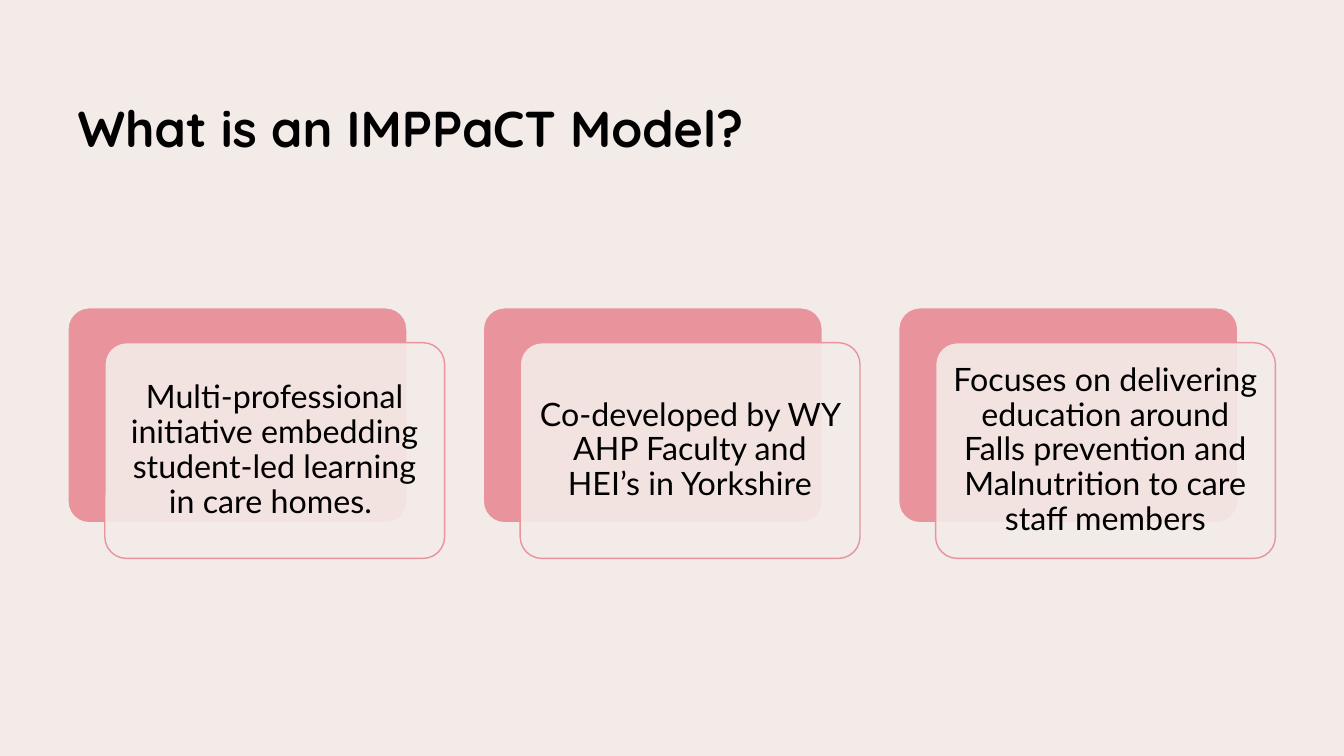
from dataclasses import dataclass

from lxml import etree
from pptx import Presentation
from pptx.dml.color import RGBColor
from pptx.enum.shapes import MSO_SHAPE
from pptx.enum.text import MSO_ANCHOR, MSO_AUTO_SIZE, PP_ALIGN
from pptx.oxml.ns import qn
from pptx.shapes.autoshape import Shape
from pptx.slide import Slide
from pptx.util import Inches, Pt

ROUNDED = MSO_SHAPE.ROUNDED_RECTANGLE
MIDDLE, BOTTOM = MSO_ANCHOR.MIDDLE, MSO_ANCHOR.BOTTOM
LEFT, CENTER = PP_ALIGN.LEFT, PP_ALIGN.CENTER
NO_AUTOFIT = MSO_AUTO_SIZE.NONE

COLORS = {"background": "F3EBE8", "pink": "E9939D", "text": "000000"}

CARD_LEFT, CARD_TOP = 0.67, 3.05
CARD_W, CARD_H = 3.37, 2.14
CARD_PITCH = 4.12
FRONT_DX, FRONT_DY = 0.37, 0.35
TEXT_INSET = 0.1


@dataclass
class Panel:
    fill: str
    line: str
    line_width: float
    opacity: int = 100


BACK = Panel("pink", "background", 1.5)
FRONT = Panel("background", "pink", 1, opacity=90)

CARD_TEXTS = [
    "Multi-professional initiative embedding student-led learning in care homes. ",
    "Co-developed by WY AHP Faculty and HEI’s in Yorkshire",
    "Focuses on delivering education around Falls prevention and "
    "Malnutrition to care staff members",
]


def rgb(name: str) -> RGBColor:
    return RGBColor.from_string(COLORS[name])


def set_text(sp: Shape, text: str, font: str, size: int, bold: bool,
             align: PP_ALIGN, anchor: MSO_ANCHOR) -> None:
    tf = sp.text_frame
    tf.text = text
    tf.word_wrap = True
    tf.auto_size = NO_AUTOFIT
    tf.vertical_anchor = anchor
    p = tf.paragraphs[0]
    p.alignment = align
    p.line_spacing = 0.9
    p.font.name = font
    p.font.size = Pt(size)
    p.font.bold = bold
    p.font.color.rgb = rgb("text")


def add_panel(s: Slide, panel: Panel, left: float, top: float) -> Shape:
    sp = s.shapes.add_shape(ROUNDED, Inches(left), Inches(top),
                            Inches(CARD_W), Inches(CARD_H))
    sp.adjustments[0] = 0.1
    sp.shadow.inherit = False
    sp.fill.solid()
    sp.fill.fore_color.rgb = rgb(panel.fill)
    sp.line.color.rgb = rgb(panel.line)
    sp.line.width = Pt(panel.line_width)
    if panel.opacity < 100:
        color = sp.element.spPr.find(qn("a:solidFill"))[0]
        etree.SubElement(color, qn("a:alpha"), val=str(panel.opacity * 1000))
    return sp


def add_card(s: Slide, text: str, left: float) -> None:
    add_panel(s, BACK, left, CARD_TOP)
    sp = add_panel(s, FRONT, left + FRONT_DX, CARD_TOP + FRONT_DY)
    tf = sp.text_frame
    tf.margin_left = tf.margin_right = Inches(TEXT_INSET)
    tf.margin_top = tf.margin_bottom = Inches(TEXT_INSET)
    set_text(sp, text, "Lato", 23, False, CENTER, MIDDLE)


def main() -> None:
    prs = Presentation()
    prs.slide_width, prs.slide_height = Inches(13.33), Inches(7.5)
    s = prs.slides.add_slide(prs.slide_layouts.get_by_name("Title Only"))
    s.background.fill.solid()
    s.background.fill.fore_color.rgb = rgb("background")

    title = s.shapes.title
    title.left, title.top = Inches(0.67), Inches(0.56)
    title.width, title.height = Inches(11.99), Inches(1.06)
    set_text(title, "What is an IMPPaCT Model?", "Quicksand", 36, True, LEFT, BOTTOM)

    for i, text in enumerate(CARD_TEXTS):
        add_card(s, text, CARD_LEFT + i * CARD_PITCH)

    prs.save("out.pptx")


if __name__ == "__main__":
    main()
